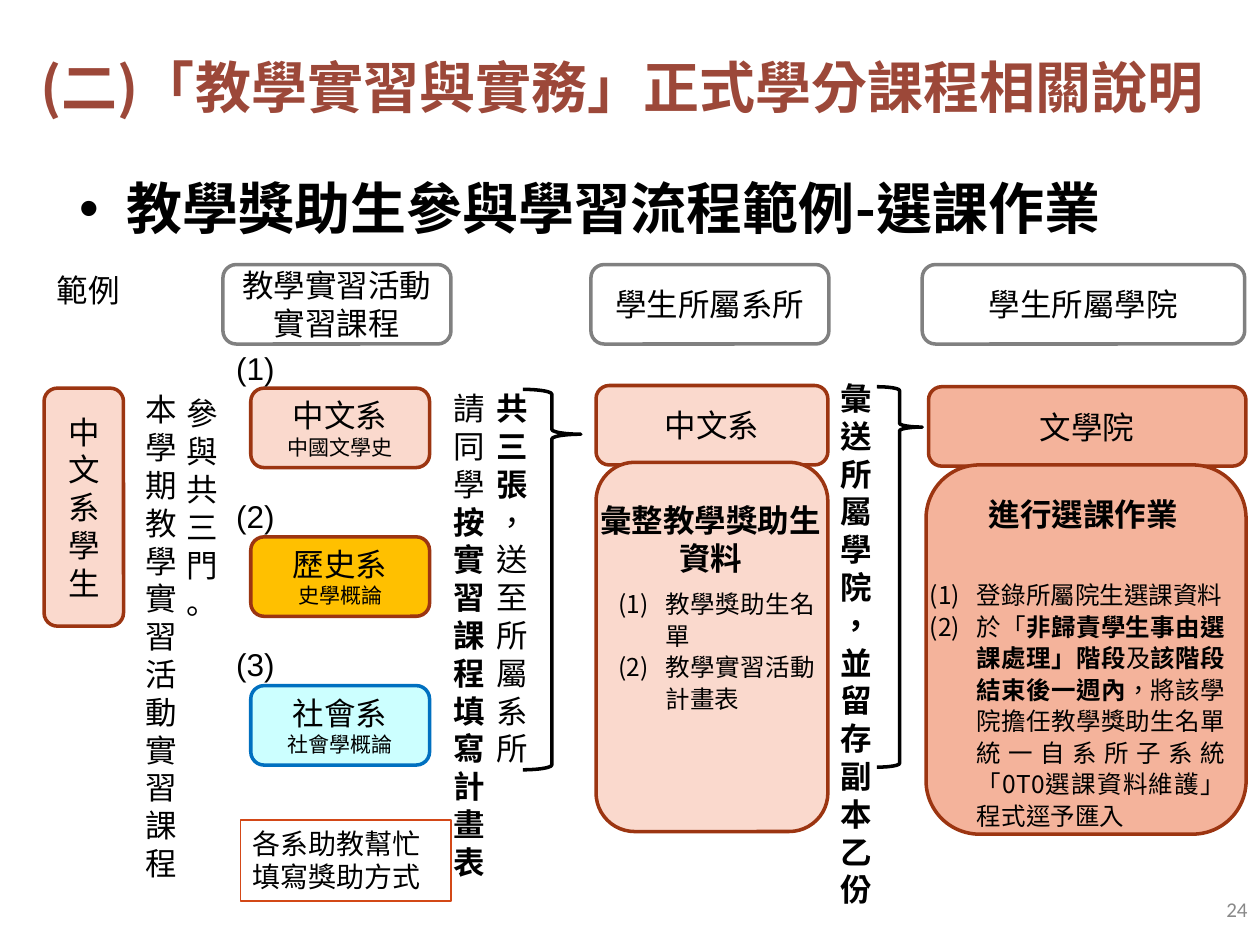
"""Build the course-selection flow slide for teaching-practice students."""
from pptx import Presentation
from pptx.dml.color import RGBColor
from pptx.enum import lang, shapes, text
from pptx.oxml.ns import qn
from pptx.util import Pt
from lxml import etree

BLACK = RGBColor(0x00, 0x00, 0x00)
WHITE = RGBColor(0xFF, 0xFF, 0xFF)
GRAY = RGBColor(0x80, 0x80, 0x80)
PAGE_GRAY = RGBColor(0x89, 0x89, 0x89)
TITLE_RED = RGBColor(0x9C, 0x48, 0x39)
RUST = RGBColor(0x9C, 0x35, 0x11)
ORANGE = RGBColor(0xD3, 0x48, 0x17)
PEACH = RGBColor(0xFA, 0xD9, 0xCD)
SALMON = RGBColor(0xF4, 0xB3, 0x9B)
GOLD = RGBColor(0xFF, 0xC0, 0x00)
AQUA = RGBColor(0xCC, 0xFF, 0xFF)
BLUE = RGBColor(0x00, 0x70, 0xC0)
NOTO = "Noto Sans CJK SC"
LEFT, CENTER, RIGHT, JUSTIFY = (text.PP_ALIGN.LEFT, text.PP_ALIGN.CENTER,
                                text.PP_ALIGN.RIGHT, text.PP_ALIGN.JUSTIFY)
ROUNDED = shapes.MSO_SHAPE.ROUNDED_RECTANGLE

deck = Presentation()
deck.slide_width, deck.slide_height = Pt(720), Pt(540)
page = deck.slides.add_slide(deck.slide_layouts[1])


def write(box, lines, font="Arial", sizes=(18,), color=BLACK, bold=False,
          align=LEFT, numbered=False):
    """Fill a box with paragraphs; text between asterisks is bold."""
    frame = box.text_frame
    frame.word_wrap = True
    for index, line in enumerate(lines):
        para = frame.paragraphs[0] if index == 0 else frame.add_paragraph()
        para.alignment = align
        if numbered:
            para.line_spacing = Pt(18)
            properties = para._p.get_or_add_pPr()
            properties.set("marL", str(Pt(27)))
            properties.set("indent", str(Pt(-27)))
            etree.SubElement(properties, qn("a:buAutoNum"), type="arabicParenBoth")
        para.font.name = font
        para.font.size = Pt(sizes[min(index, len(sizes) - 1)])
        para.font.color.rgb = color
        pieces = line.split("*")
        if len(pieces) == 1:
            para.font.bold = bold
        for place, piece in enumerate(pieces):
            if piece:
                span = para.add_run()
                span.text = piece
                span.font.language_id = lang.MSO_LANGUAGE_ID.TRADITIONAL_CHINESE
                if len(pieces) > 1:
                    span.font.bold = place % 2 == 1


def draw(kind, area, fill, line, width=2):
    """Add a preset shape without shadow; no fill colour leaves it open."""
    shape = page.shapes.add_shape(kind, *map(Pt, area))
    shape.shadow.inherit = False
    if fill is None:
        shape.fill.background()
    else:
        shape.fill.solid()
        shape.fill.fore_color.rgb = fill
    shape.line.color.rgb = line
    shape.line.width = Pt(width)
    return shape


title, body = page.shapes.title, page.placeholders[1]
title.left, title.top, title.width, title.height = map(Pt, (-11.5, 4.3, 734.4, 90))
title.text_frame.vertical_anchor = text.MSO_ANCHOR.MIDDLE
write(title, ["(二)「教學實習與實務」正式學分課程相關說明"], NOTO, (32,), TITLE_RED, True, CENTER)
body.left, body.top, body.width, body.height = map(Pt, (38.2, 95.8, 697.7, 53.3))
write(body, ["教學獎助生參與學習流程範例-選課作業"], NOTO, (32,), BLACK, True)

cards = [
    ((25.2, 221.8, 45.4, 136), PEACH, RUST, ["中文系學生"]),
    ((127.4, 151.2, 130.3, 45.4), WHITE, GRAY, ["教學實習活動", "實習課程"]),
    ((337.7, 151.2, 136, 45.4), WHITE, GRAY, ["學生所屬系所"]),
    ((527, 151.2, 184.3, 45.4), WHITE, GRAY, ["學生所屬學院"]),
    ((340.6, 220.3, 132.5, 45.4), PEACH, RUST, ["中文系"]),
    ((530.6, 221, 181.4, 45.4), SALMON, RUST, ["文學院"]),
    ((340.6, 264.2, 132.5, 211), PEACH, RUST, []),
    ((529.2, 265.7, 182.9, 211), SALMON, RUST, []),
]
for area, fill, line, lines in cards:
    card = draw(ROUNDED, area, fill, line)
    card.text_frame.vertical_anchor = text.MSO_ANCHOR.MIDDLE
    write(card, lines, "Cambria", align=CENTER)

courses = [
    ("中文系", "中國文學史", PEACH, RUST),
    ("歷史系", "史學概論", GOLD, RUST),
    ("社會系", "社會學概論", AQUA, BLUE),
]
for index, (department, course, fill, line) in enumerate(courses):
    top = 221.8 + 85 * index
    card = draw(ROUNDED, (143.3, top, 102.2, 45.4), fill, line)
    card.text_frame.vertical_anchor = text.MSO_ANCHOR.MIDDLE
    write(card, [department, course], "Cambria", (18, 12), align=CENTER)
    label = page.shapes.add_textbox(Pt(127.8), Pt(196 + 84.6 * index), Pt(39.6), Pt(28.8))
    write(label, [f"({index + 1})"])

for area, point in [((298.8, 222.5, 33.1, 217.4), 0.118), ((501.1, 221, 25.9, 217.4), 0.106)]:
    brace = draw(shapes.MSO_SHAPE.RIGHT_BRACE, area, None, BLACK)
    brace.adjustments[0], brace.adjustments[1] = 0.083, point

notes = [
    ((25.2, 151.2, 64.1, 28.8), ["範例"], {}),
    ((76.3, 219.6, 25.2, 290.9), ["本學期教學實習活動實習課程"], {}),
    ((99.4, 221.8, 28.1, 138.2), ["參與共三門", "。"], {}),
    ((252, 218.9, 27.4, 290.9), ["請同學", "*按實習課程填寫計畫表*"], {}),
    ((276.5, 218.9, 27.4, 225.4), ["*共三張*，送至所屬系所"], {}),
    ((473, 213.1, 27.4, 312.5), ["彙送所屬學院，並留存副本乙份"], {"font": NOTO, "bold": True}),
    ((331.9, 283, 148.3, 51.1), ["彙整教學獎助生資料"], {"bold": True, "align": CENTER}),
    ((558, 279.4, 130.3, 28.8), ["進行選課作業"], {"bold": True}),
    ((346.3, 331.9, 126.7, 79.9), ["教學獎助生名單", "教學實習活動計畫表"],
     {"font": NOTO, "sizes": (14,), "align": JUSTIFY, "numbered": True}),
    ((524.2, 326.9, 182.9, 152.6),
     ["登錄所屬院生選課資料",
      "於「*非歸責學生事由選課處理」階段*及*該階段結束後一週內*"
      "，將該學院擔任教學獎助生名單統一自系所子系統「0T0選課資料維護」程式逕予匯入"],
     {"font": NOTO, "sizes": (14,), "align": JUSTIFY, "numbered": True}),
    ((552.2, 509, 167.8, 28.8), ["24"],
     {"font": "Calibri", "sizes": (12,), "color": PAGE_GRAY, "align": RIGHT}),
]
for area, lines, style in notes:
    write(page.shapes.add_textbox(*map(Pt, area)), lines, **style)

reminder = draw(shapes.MSO_SHAPE.RECTANGLE, (137.5, 468.7, 120.2, 46.1), None, ORANGE, 1)
reminder.text_frame.vertical_anchor = text.MSO_ANCHOR.TOP
write(reminder, ["各系助教幫忙填寫獎助方式"], sizes=(16,))

deck.save("out.pptx")
